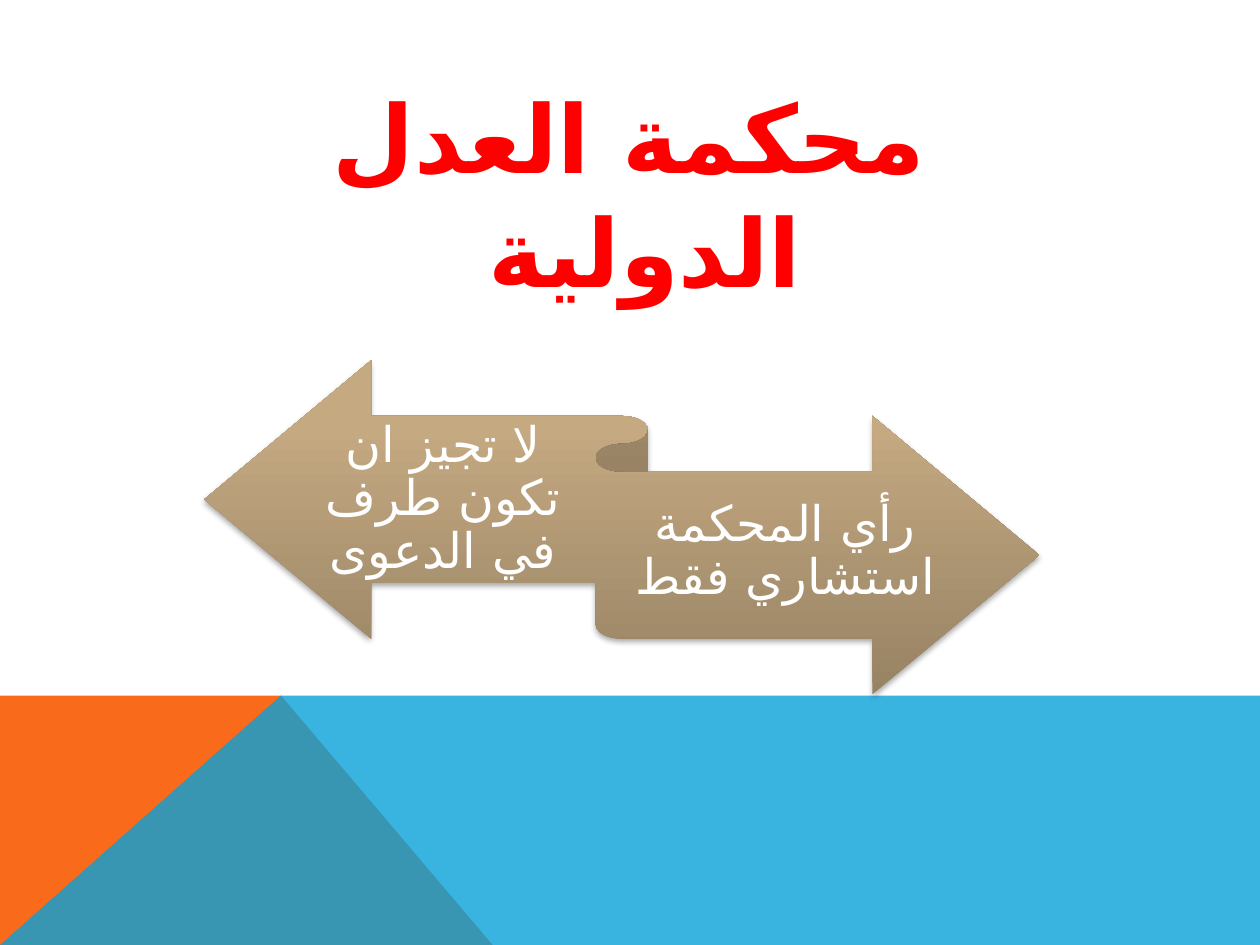
from copy import deepcopy

from lxml.etree import SubElement
from pptx import Presentation
from pptx.dml.color import RGBColor
from pptx.enum.shapes import MSO_SHAPE
from pptx.enum.text import MSO_ANCHOR, PP_ALIGN
from pptx.oxml.ns import qn
from pptx.util import Inches, Pt

ORANGE = RGBColor(0xF9, 0x6A, 0x1B)
BLUE = RGBColor(0x08, 0xA1, 0xD9)
RED = RGBColor(0xFF, 0x00, 0x00)
WHITE = RGBColor(0xFF, 0xFF, 0xFF)
BLACK = RGBColor(0x00, 0x00, 0x00)
RIBBON_STOPS = [
    (0, RGBColor(0x97, 0x82, 0x63)),
    (0.8, RGBColor(0xC4, 0xA9, 0x81)),
    (1, RGBColor(0xC6, 0xAA, 0x80)),
]


class SlideBuilder:
    def __init__(self, slide, font="Cabin", arabic_font="DejaVu Sans"):
        self.slide = slide
        self.font = font
        self.arabic_font = arabic_font

    def polygon(self, points, color, opacity=100):
        corners = [(Inches(x), Inches(y)) for x, y in points]
        builder = self.slide.shapes.build_freeform(*corners[0], scale=1.0)
        builder.add_line_segments(corners[1:], close=True)
        shape = builder.convert_to_shape()
        shape.shadow.inherit = False
        shape.fill.solid()
        shape.fill.fore_color.rgb = color
        shape.line.fill.background()
        if opacity < 100:
            color_element = shape.element.spPr.find(".//" + qn("a:srgbClr"))
            SubElement(color_element, qn("a:alpha"), val=str(opacity * 1000))

    def ribbon(self, left, top, width, height, stops):
        """Add a double arrow with an upward gradient and a soft shadow."""
        shape = self.slide.shapes.add_shape(
            MSO_SHAPE.LEFT_RIGHT_RIBBON,
            Inches(left), Inches(top), Inches(width), Inches(height))
        shape.line.fill.background()
        shape.fill.gradient()
        shape.fill.gradient_angle = 90
        properties = shape.element.spPr
        stop_list = properties.find(".//" + qn("a:gsLst"))
        stop_list.append(deepcopy(stop_list[-1]))
        for stop, (position, color) in zip(shape.fill.gradient_stops, stops):
            stop.position = position
            stop.color.rgb = color
        shape.shadow.inherit = False
        shadow = SubElement(
            properties.find(qn("a:effectLst")), qn("a:outerShdw"),
            blurRad=str(Pt(3.1)), dist=str(Pt(1.8)), dir="5400000",
            rotWithShape="0")
        shadow_color = SubElement(shadow, qn("a:srgbClr"), val=str(BLACK))
        SubElement(shadow_color, qn("a:alpha"), val="35000")

    def text(self, left, top, width, height, words, size, color, bold=False):
        """Add a centred right-to-left text box and return its frame."""
        box = self.slide.shapes.add_textbox(
            Inches(left), Inches(top), Inches(width), Inches(height))
        frame = box.text_frame
        frame.word_wrap = True
        frame.text = words
        paragraph = frame.paragraphs[0]
        paragraph.alignment = PP_ALIGN.CENTER
        paragraph._p.get_or_add_pPr().set("rtl", "1")
        run = paragraph.runs[0]
        run.font.name = self.font
        run.font.size = Pt(size)
        run.font.bold = bold
        run.font.color.rgb = color
        run.font._element.set("lang", "ar-SA")
        SubElement(run.font._element, qn("a:cs"), typeface=self.arabic_font)
        return frame

    def arrow_label(self, left, top, width, height, words):
        frame = self.text(left, top, width, height, words, 28, WHITE)
        frame.vertical_anchor = MSO_ANCHOR.MIDDLE
        frame.margin_left = frame.margin_right = 0
        frame.margin_top = Inches(0.11)
        frame.margin_bottom = Inches(0.12)
        frame.paragraphs[0].line_spacing = 0.9


def main():
    presentation = Presentation()
    presentation.slide_width = Inches(10)
    presentation.slide_height = Inches(7.5)
    slide = presentation.slides.add_slide(presentation.slide_layouts[6])
    builder = SlideBuilder(slide)

    band_top, bottom, peak = 5.52, 7.5, 2.23
    builder.polygon(
        [(0, bottom), (0, band_top), (peak, band_top), (3.91, bottom)], ORANGE)
    builder.polygon(
        [(0, bottom), (peak, band_top), (10, band_top), (10, bottom)],
        BLUE, opacity=80)

    builder.ribbon(1.62, 2.86, 6.63, 2.65, RIBBON_STOPS)
    builder.arrow_label(2.42, 3.32, 2.19, 1.3, "لا تجيز ان تكون طرف في الدعوى")
    builder.arrow_label(4.94, 3.74, 2.58, 1.3, "رأي المحكمة استشاري فقط")
    builder.text(2.34, 0.58, 5.3, 1.01, "محكمة العدل الدولية ", 54, RED, bold=True)

    presentation.save("out.pptx")


if __name__ == "__main__":
    main()
